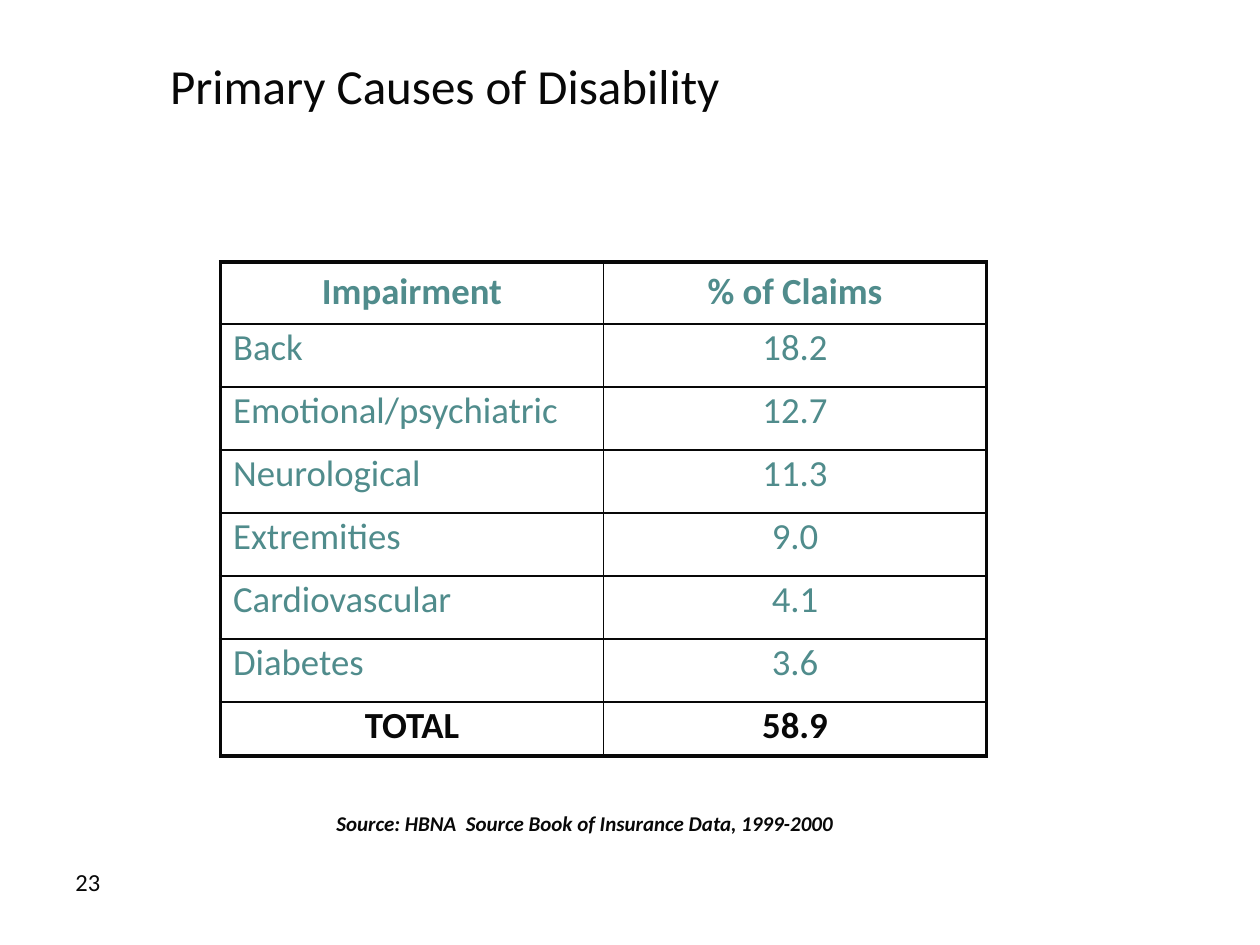
from lxml.etree import SubElement
from pptx import Presentation
from pptx.dml.color import RGBColor
from pptx.enum.text import MSO_ANCHOR, PP_ALIGN
from pptx.oxml.ns import qn
from pptx.util import Inches, Pt

COLORS = {"ink": "080808", "teal": "508C8C", "white": "FFFFFF"}
ROWS = [
    ("Impairment", "% of Claims"),
    ("Back", "18.2"),
    ("Emotional/psychiatric", "12.7"),
    ("Neurological", "11.3"),
    ("Extremities", "9.0"),
    ("Cardiovascular", "4.1"),
    ("Diabetes", "3.6"),
    ("TOTAL", "58.9"),
]


def write_text(text_frame, text, size, color="ink", bold=False, italic=False,
               align=PP_ALIGN.LEFT, line_spacing=1.0):
    paragraph = text_frame.paragraphs[0]
    paragraph.alignment = align
    paragraph.line_spacing = line_spacing
    run = paragraph.add_run()
    run.text = text
    run.font.name = "Calibri"
    run.font.size = Pt(size)
    run.font.bold = bold
    run.font.italic = italic
    run.font.color.rgb = RGBColor.from_string(COLORS[color])


def add_borders(cell, widths):
    properties = cell._tc.get_or_add_tcPr()
    for position, (side, width) in enumerate(widths.items()):
        line = properties.makeelement(qn(f"a:{side}"), {"w": str(Pt(width))})
        properties.insert(position, line)
        fill = SubElement(line, qn("a:solidFill"))
        SubElement(fill, qn("a:srgbClr"), val=COLORS["ink"])


presentation = Presentation()
presentation.slide_width = Inches(10)
presentation.slide_height = Inches(7.5)
slide = presentation.slides.add_slide(presentation.slide_layouts[5])

title = slide.shapes.title
title.left, title.top = Inches(1.25), Inches(0.17)
title.width, title.height = Inches(8.25), Inches(1)
title.text_frame.vertical_anchor = MSO_ANCHOR.MIDDLE
write_text(title.text_frame, "Primary Causes of Disability", 28)

page_number = slide.shapes.add_textbox(Inches(0.5), Inches(6.83), Inches(2.33), Inches(0.52))
page_number.text_frame.word_wrap = True
write_text(page_number.text_frame, "23", 14)

source = slide.shapes.add_textbox(Inches(2.67), Inches(6.45), Inches(6.5), Inches(0.19))
source_frame = source.text_frame
source_frame.word_wrap = True
source_frame.vertical_anchor = MSO_ANCHOR.BOTTOM
source_frame.margin_left = source_frame.margin_right = 0
source_frame.margin_top = source_frame.margin_bottom = 0
write_text(source_frame, "Source: HBNA  Source Book of Insurance Data, 1999-2000", 12,
           bold=True, italic=True, line_spacing=0.95)

last_row = len(ROWS) - 1
table = slide.shapes.add_table(len(ROWS), 2, Inches(1.75), Inches(2.08),
                               Inches(6.08), Inches(3.9)).table
for column in table.columns:
    column.width = Inches(3.04)

for row_index, values in enumerate(ROWS):
    is_header = row_index == 0
    is_total = row_index == last_row
    table.rows[row_index].height = Inches(0.49 if is_header else 0.43 if is_total else 0.5)
    for column_index, value in enumerate(values):
        cell = table.cell(row_index, column_index)
        cell.fill.solid()
        cell.fill.fore_color.rgb = RGBColor.from_string(COLORS["white"])
        cell.vertical_anchor = MSO_ANCHOR.MIDDLE if is_header else MSO_ANCHOR.TOP
        centered = is_header or is_total or column_index == 1
        write_text(cell.text_frame, value, 21,
                   color="ink" if is_total else "teal",
                   bold=is_header or is_total,
                   align=PP_ALIGN.CENTER if centered else PP_ALIGN.LEFT,
                   line_spacing=0.85)
        add_borders(cell, {
            "lnL": 2.25 if column_index == 0 else 1,
            "lnR": 2.25 if column_index == 1 else 1,
            "lnT": 2.25 if is_header else 1,
            "lnB": 2.25 if is_total else 1,
        })

presentation.save("out.pptx")
